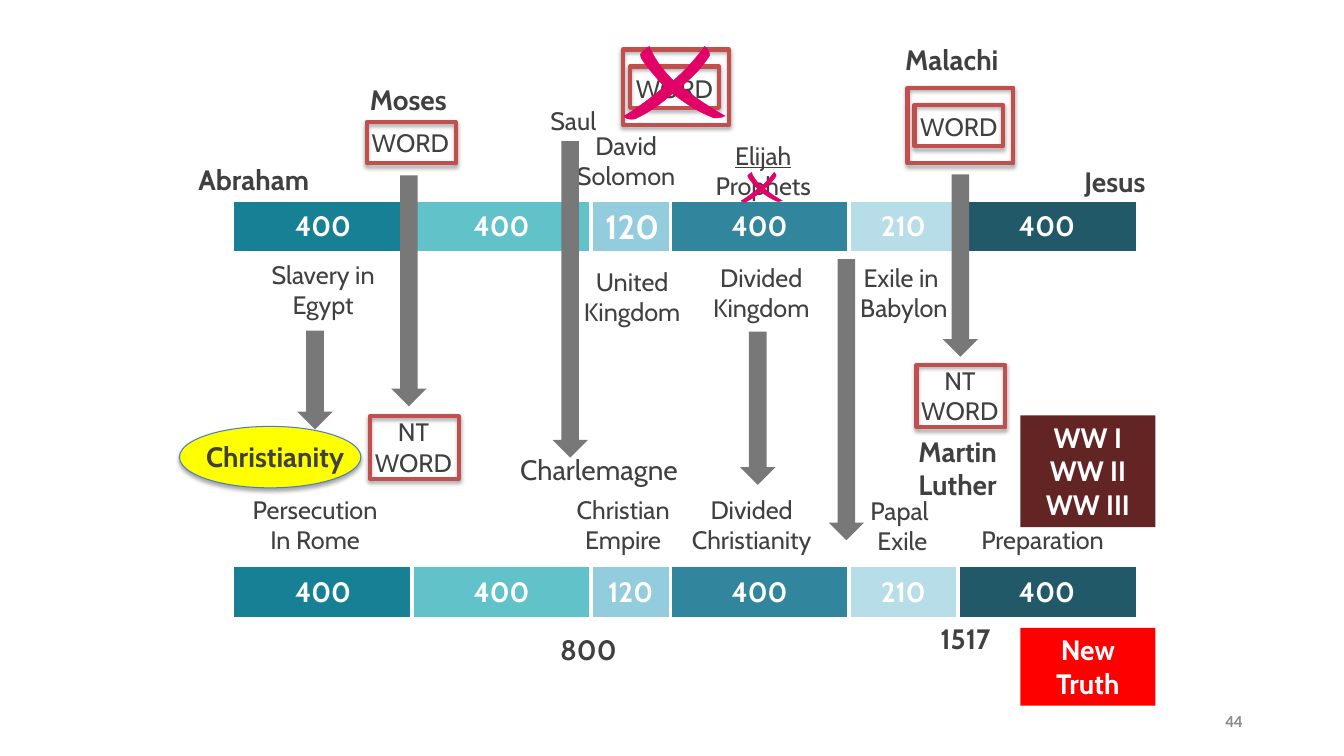
from dataclasses import dataclass

from lxml.etree import SubElement
from pptx import Presentation
from pptx.dml.color import RGBColor
from pptx.enum.shapes import MSO_SHAPE
from pptx.enum.text import MSO_ANCHOR, MSO_AUTO_SIZE, PP_ALIGN
from pptx.oxml.ns import qn
from pptx.util import Inches, Pt


@dataclass(frozen=True)
class Theme:
    font: str = "Cabin"
    number_font: str = "Calibri"
    ink: str = "404040"
    white: str = "FFFFFF"
    muted: str = "8C8C8C"
    frame: str = "C0504D"
    cross: str = "E20267"
    arrow: str = "787878"
    oval: str = "FFFF00"
    oval_line: str = "4B7EBC"
    label: int = 18
    name: int = 20
    big: int = 24
    small: int = 12


T = Theme()
LEFT, CENTER, RIGHT = PP_ALIGN.LEFT, PP_ALIGN.CENTER, PP_ALIGN.RIGHT

# Lengths are in a grid of one-inch columns and rows.
SLIDE = (13.33, 7.5)
BAND_LEFT, BAND_HEIGHT = 2.32, 0.49
BAND_COLUMNS = [1.77, 1.77, 0.79, 1.77, 1.08, 1.77]
BAND_FILLS = ["178095", "61C2CA", "93CDDD", "31859C", "B7DEE8", "215968"]
BANDS = [  # top, years of each period
    (2.0, ["400", "400", "", "400", "210", "400"]),
    (5.63, ["400", "400", "120", "400", "210", "400"]),
]

# In texts, a newline starts a paragraph and "|" breaks a line.
LABELS = [  # box, text
    ((2.32, 2.52, 1.77, 0.71), "Slavery in\nEgypt"),
    ((5.46, 2.59, 1.62, 0.71), "United Kingdom"),
    ((5.40, 1.24, 1.62, 0.71), "David\nSolomon"),
    ((6.69, 2.55, 1.72, 0.71), "Divided Kingdom"),
    ((6.71, 1.34, 1.72, 0.71), "Elijah\nProphets"),
    ((8.32, 2.55, 1.29, 0.71), "Exile in |Babylon"),
    ((2.24, 4.85, 1.77, 0.71), "Persecution\nIn Rome"),
    ((5.49, 4.85, 1.38, 0.71), "Christian|Empire"),
    ((6.57, 4.85, 1.77, 0.71), "Divided Christianity"),
    ((8.41, 4.86, 1.08, 0.71), "Papal |Exile"),
    ((9.33, 5.15, 2.02, 0.40), "Preparation"),
    ((5.19, 1.00, 0.99, 0.41), "Saul"),
]
UNDERLINED = {"Elijah"}
NAMES = [  # box, text, alignment, bold
    ((9.98, 1.58, 1.48, 0.44), "Jesus", RIGHT, True),
    ((1.87, 1.56, 1.87, 0.44), "Abraham", LEFT, True),
    ((8.88, 0.37, 1.34, 0.44), "Malachi", LEFT, True),
    ((3.57, 0.77, 1.14, 0.44), "Moses", LEFT, True),
    ((1.71, 4.31, 2.04, 0.44), "Christianity", CENTER, True),
    ((5.06, 4.44, 1.84, 0.44), "Charlemagne", LEFT, False),
    ((9.01, 4.26, 1.19, 0.77), "Martin Luther", LEFT, True),
    ((9.03, 6.12, 1.09, 0.44), "1517", CENTER, True),
    ((5.29, 6.23, 1.09, 0.44), "800", CENTER, True),
]
WORDS = [  # left, top, text, height of frame, height of text, double frame
    (3.64, 1.21, "WORD", 0.41, 0.41, False),
    (6.25, 0.66, "WORD", 0.41, 0.41, True),
    (9.07, 1.04, "WORD", 0.41, 0.41, True),
    (3.67, 4.13, "NT|WORD", 0.62, 0.71, False),
    (9.09, 3.62, "NT|WORD", 0.62, 0.71, False),
]
WORD_WIDTH, OUTER_FRAME, OUTER_SHIFT = 0.88, (1.05, 0.75), (0.07, 0.17)
PANELS = [  # box, text, fill
    ((10.12, 4.12, 1.34, 1.11), "WW I\nWW II\nWW III", "632523"),
    ((10.12, 6.23, 1.34, 0.77), "New Truth", "FF0000"),
]
OVAL = (1.78, 4.23, 1.8, 0.61)
ARROW_WIDTH = 0.35
ARROWS = [  # left, top, height
    (3.88, 1.74, 2.29), (2.95, 3.28, 0.98), (5.48, 1.40, 3.14),
    (7.34, 3.29, 1.52), (8.22, 2.57, 2.79), (9.35, 1.73, 1.81),
]
CROSSES = [(7.35, 1.71, 0.41), (6.19, 0.46, 1.0)]  # left, top, width
CROSS_START = (40, 40)  # outline in hundredths of its width
CROSS_CURVES = [  # two control points and the end of each curve
    ((40, 40), (16, 60), (0, 69)), ((1, 72), (6, 73), (11, 72)),
    ((27, 64), (34, 59), (48, 47)), ((66, 60), (72, 64), (89, 71)),
    ((95, 71), (96, 71), (100, 69)), ((88, 62), (76, 55), (57, 40)),
    ((66, 31), (74, 26), (85, 9)), ((85, 6), (84, 3), (80, 0)),
    ((67, 17), (62, 22), (49, 34)), ((34, 19), (29, 9), (25, 0)),
    ((21, 3), (21, 2), (16, 8)), ((16, 12), (22, 19), (26, 24)),
    ((30, 29), (37, 37), (40, 40)),
]


def rgb(color):
    return RGBColor.from_string(color)


def write(tf, text, size, color=T.ink, bold=False, align=CENTER, font=T.font):
    for i, line in enumerate(text.split("\n")):
        p = tf.paragraphs[0] if i == 0 else tf.add_paragraph()
        p.alignment = align
        for j, part in enumerate(line.split("|")):
            if j:
                p.add_line_break()
            r = p.add_run()
            r.text = part
            r.font.name, r.font.size, r.font.bold = font, Pt(size), bold
            r.font.color.rgb = rgb(color)
            if part in UNDERLINED:
                r.font.underline = True


def add_text(slide, box, text, size, inset=0.1, wrap=True, grow=True, **style):
    tf = slide.shapes.add_textbox(*map(Inches, box)).text_frame
    tf.word_wrap = wrap
    tf.auto_size = MSO_AUTO_SIZE.SHAPE_TO_FIT_TEXT if grow else MSO_AUTO_SIZE.NONE
    tf.margin_left = tf.margin_right = Inches(inset)
    write(tf, text, size, **style)
    return tf


def paint(sp, fill=None, line=None, width=0, shadow=False):
    sp.shadow.inherit = False
    if fill:
        sp.fill.solid()
        sp.fill.fore_color.rgb = rgb(fill)
    else:
        sp.fill.background()
    if line:
        sp.line.color.rgb, sp.line.width = rgb(line), Pt(width)
    else:
        sp.line.fill.background()
    if shadow:
        effects = sp._element.spPr.find(qn("a:effectLst"))
        outer = SubElement(effects, qn("a:outerShdw"), blurRad=str(Pt(3.1)),
                           dist=str(Pt(1.8)), dir="5400000", rotWithShape="0")
        black = SubElement(outer, qn("a:srgbClr"), val="000000")
        SubElement(black, qn("a:alpha"), val="35000")


def add_shape(slide, kind, box, **look):
    sp = slide.shapes.add_shape(kind, *map(Inches, box))
    paint(sp, **look)
    return sp


def add_band(slide, top, years):
    frame = slide.shapes.add_table(1, len(years), Inches(BAND_LEFT), Inches(top),
                                   Inches(sum(BAND_COLUMNS)), Inches(BAND_HEIGHT))
    table = frame.table
    style = table._tbl.tblPr.find(qn("a:tableStyleId"))
    style.text = "{2D5ABB26-0587-4C30-8999-92F81FD0307C}"
    last = len(years) - 1
    for i, (year, width, fill) in enumerate(zip(years, BAND_COLUMNS, BAND_FILLS)):
        table.columns[i].width = Inches(width)
        cell = table.cell(0, i)
        cell.vertical_anchor = MSO_ANCHOR.MIDDLE
        if year:
            write(cell.text_frame, year, T.name, T.white, True)
        tc_pr = cell._tc.get_or_add_tcPr()
        for side, inner in (("a:lnL", i > 0), ("a:lnR", i < last)):
            if inner:
                border = SubElement(tc_pr, qn(side), w=str(Pt(3)))
                border_fill = SubElement(border, qn("a:solidFill"))
                SubElement(border_fill, qn("a:srgbClr"), val=T.white)
        cell.fill.solid()
        cell.fill.fore_color.rgb = rgb(fill)


def add_cross(slide, left, top, width):
    """Build the outline through the curve ends, then bend each side into its curve."""
    builder = slide.shapes.build_freeform(*CROSS_START, scale=Inches(width) / 100)
    builder.add_line_segments([curve[-1] for curve in CROSS_CURVES], close=True)
    sp = builder.convert_to_shape(Inches(left), Inches(top))
    sides = list(sp._element.iter(qn("a:lnTo")))
    for side, curve in zip(sides, CROSS_CURVES):
        side.tag = qn("a:cubicBezTo")
        side.remove(side[0])
        for x, y in curve:
            SubElement(side, qn("a:pt"), x=str(x), y=str(y))
    paint(sp, T.cross, T.cross, 0.25)


def main():
    prs = Presentation()
    prs.slide_width, prs.slide_height = map(Inches, SLIDE)
    s = prs.slides.add_slide(prs.slide_layouts[6])

    for top, years in BANDS:
        add_band(s, top, years)
    add_text(s, (5.85, 1.99, 0.84, 0.5), "120", T.big, wrap=False, color=T.white, bold=True)
    add_shape(s, MSO_SHAPE.OVAL, OVAL, fill=T.oval, line=T.oval_line, width=0.75, shadow=True)
    for box, text in LABELS:
        add_text(s, box, text, T.label, inset=0.04)
    for box, text, align, bold in NAMES:
        add_text(s, box, text, T.name, align=align, bold=bold)

    for x, y, text, height, text_height, double in WORDS:
        frames = [(x, y, WORD_WIDTH, height)]
        if double:
            frames.append((x - OUTER_SHIFT[0], y - OUTER_SHIFT[1], *OUTER_FRAME))
        for box in frames:
            add_shape(s, MSO_SHAPE.RECTANGLE, box, line=T.frame, width=3, shadow=True)
        shift = 0.01 if double else 0
        text_top = y + (height - text_height) / 2 + 2 * shift
        add_text(s, (x + shift, text_top, WORD_WIDTH - 0.02, text_height), text,
                 T.label, inset=0.04)

    for cross in CROSSES:
        add_cross(s, *cross)
    for x, y, height in ARROWS:
        sp = add_shape(s, MSO_SHAPE.DOWN_ARROW, (x, y, ARROW_WIDTH, height), fill=T.arrow)
        sp.adjustments[0], sp.adjustments[1] = 0.5, 0.5
    for box, text, fill in PANELS:
        tf = add_shape(s, MSO_SHAPE.RECTANGLE, box, fill=fill).text_frame
        tf.word_wrap, tf.vertical_anchor = True, MSO_ANCHOR.TOP
        write(tf, text, T.name, T.white, True)

    tf = add_text(s, (9.42, 6.95, 3, 0.4), "44", T.small, grow=False, bold=True,
                  color=T.muted, align=RIGHT, font=T.number_font)
    tf.vertical_anchor = MSO_ANCHOR.MIDDLE
    prs.save("out.pptx")


if __name__ == "__main__":
    main()
